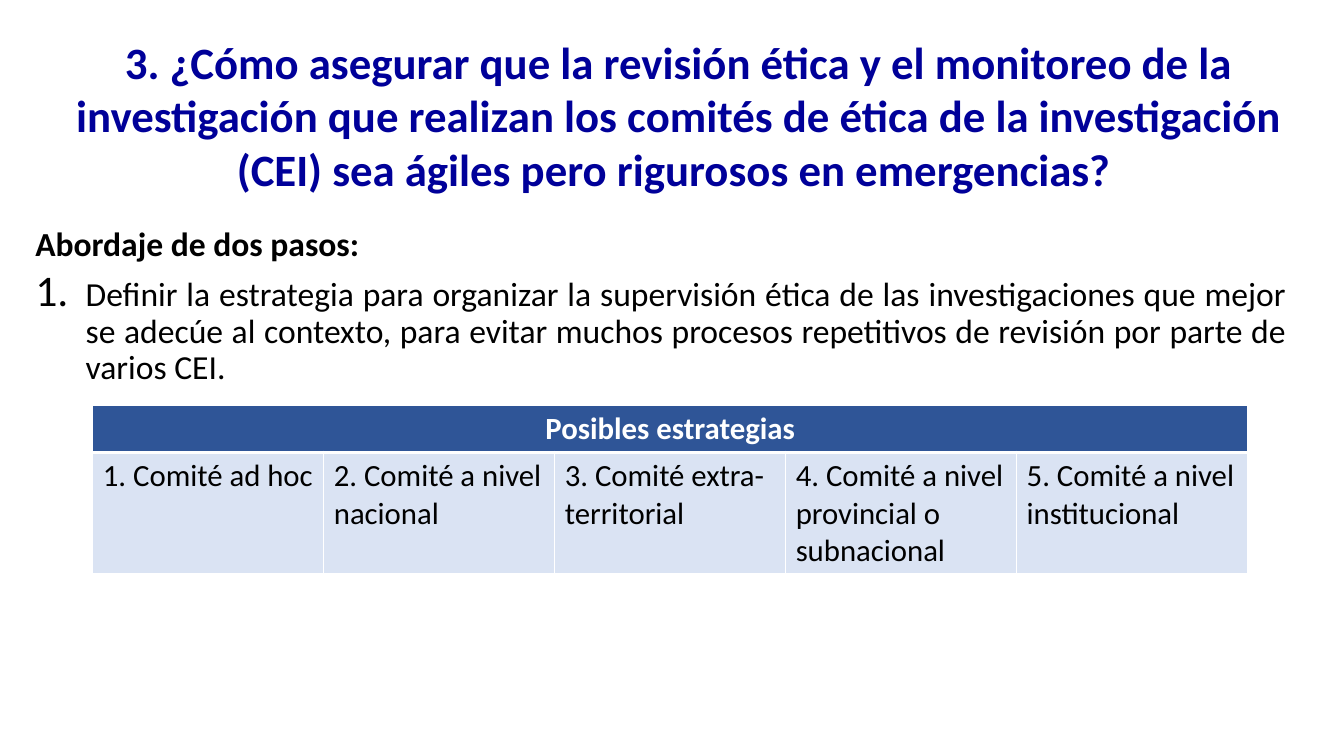
from lxml.etree import SubElement
from pptx import Presentation
from pptx.dml.color import RGBColor
from pptx.enum.text import PP_ALIGN as Align
from pptx.oxml.ns import qn
from pptx.util import Cm, Pt

TITLE = ("3. ¿Cómo asegurar que la revisión ética y el monitoreo de la investigación que realizan "
         "los comités de ética de la investigación (CEI) sea ágiles pero rigurosos en emergencias? ")
LEAD = "Abordaje de dos pasos:"
STEP = ("Definir la estrategia para organizar la supervisión ética de las investigaciones que mejor "
        "se adecúe al contexto, para evitar muchos procesos repetitivos de revisión por parte de varios CEI.")
TABLE_HEADING = "Posibles estrategias"
STRATEGIES = ["1. Comité ad hoc", "2. Comité a nivel nacional", "3. Comité extra-territorial",
              "4. Comité a nivel provincial o subnacional", "5. Comité a nivel institucional"]
COLORS = {"title": "000099", "text": "000000", "heading": "2F5597", "cell": "DAE3F3", "white": "FFFFFF"}
FONT = "Calibri"
ROW_HEIGHTS = (1.19, 3.05)
TABLE_WIDTH = 29.1


def add_run(paragraph, text, size, color, bold=False):
    """Append one formatted run to a paragraph."""
    run = paragraph.add_run()
    run.text = text
    run.font.name, run.font.size, run.font.bold = FONT, Pt(size), bold
    run.font.color.rgb = RGBColor.from_string(COLORS[color])


def add_text_frame(slide, left, top, width, height):
    """Add a wrapping text box and return its text frame."""
    frame = slide.shapes.add_textbox(Cm(left), Cm(top), Cm(width), Cm(height)).text_frame
    frame.word_wrap = True
    return frame


def number_paragraph(paragraph, indent):
    """Give a paragraph an enlarged automatic number and a hanging indent."""
    properties = paragraph._p.get_or_add_pPr()
    properties.set("marL", str(Cm(indent)))
    properties.set("indent", str(-Cm(indent)))
    SubElement(properties, qn("a:buSzPct"), val="130000")
    SubElement(properties, qn("a:buAutoNum"), type="arabicPeriod")


def style_cell(cell, fill, top_width, bottom_width):
    """Set white borders, then the fill of a cell."""
    properties = cell._tc.get_or_add_tcPr()
    borders = {"a:lnL": 1, "a:lnR": 1, "a:lnT": top_width, "a:lnB": bottom_width}
    for tag, width in borders.items():
        line = SubElement(properties, qn(tag), w=str(Pt(width)))
        SubElement(SubElement(line, qn("a:solidFill")), qn("a:srgbClr"), val=COLORS["white"])
    cell.fill.solid()
    cell.fill.fore_color.rgb = RGBColor.from_string(COLORS[fill])


def add_strategy_table(slide):
    """Add the table with a merged heading over the strategies."""
    count = len(STRATEGIES)
    table = slide.shapes.add_table(2, count, Cm(2.34), Cm(10.21), Cm(TABLE_WIDTH), Cm(sum(ROW_HEIGHTS))).table
    for row, height in zip(table.rows, ROW_HEIGHTS):
        row.height = Cm(height)
    for index, strategy in enumerate(STRATEGIES):
        table.columns[index].width = Cm(TABLE_WIDTH / count)
        style_cell(table.cell(0, index), "heading", 1, 3)
        style_cell(table.cell(1, index), "cell", 3, 1)
        add_run(table.cell(1, index).text_frame.paragraphs[0], strategy, 22, "text")
    heading = table.cell(0, 0)
    heading.merge(table.cell(0, count - 1))
    paragraph = heading.text_frame.paragraphs[0]
    paragraph.alignment = Align.CENTER
    add_run(paragraph, TABLE_HEADING, 22, "white", True)


def main():
    """Build and save the slide."""
    presentation = Presentation()
    presentation.slide_width, presentation.slide_height = Cm(33.87), Cm(19.05)
    slide = presentation.slides.add_slide(presentation.slide_layouts[6])

    title = add_text_frame(slide, 1.57, 0.74, 31.09, 4.37).paragraphs[0]
    title.alignment = Align.CENTER
    add_run(title, TITLE, 32, "title", True)

    body = add_text_frame(slide, 0.64, 5.61, 32.03, 3.91)
    lead, step = body.paragraphs[0], body.add_paragraph()
    number_paragraph(step, 1.27)
    step.space_before = Pt(10)
    for paragraph, text, bold in ((lead, LEAD, True), (step, STEP, False)):
        paragraph.alignment = Align.JUSTIFY
        paragraph.line_spacing = 0.9
        add_run(paragraph, text, 24, "text", bold)

    add_strategy_table(slide)
    presentation.save("out.pptx")


if __name__ == "__main__":
    main()
